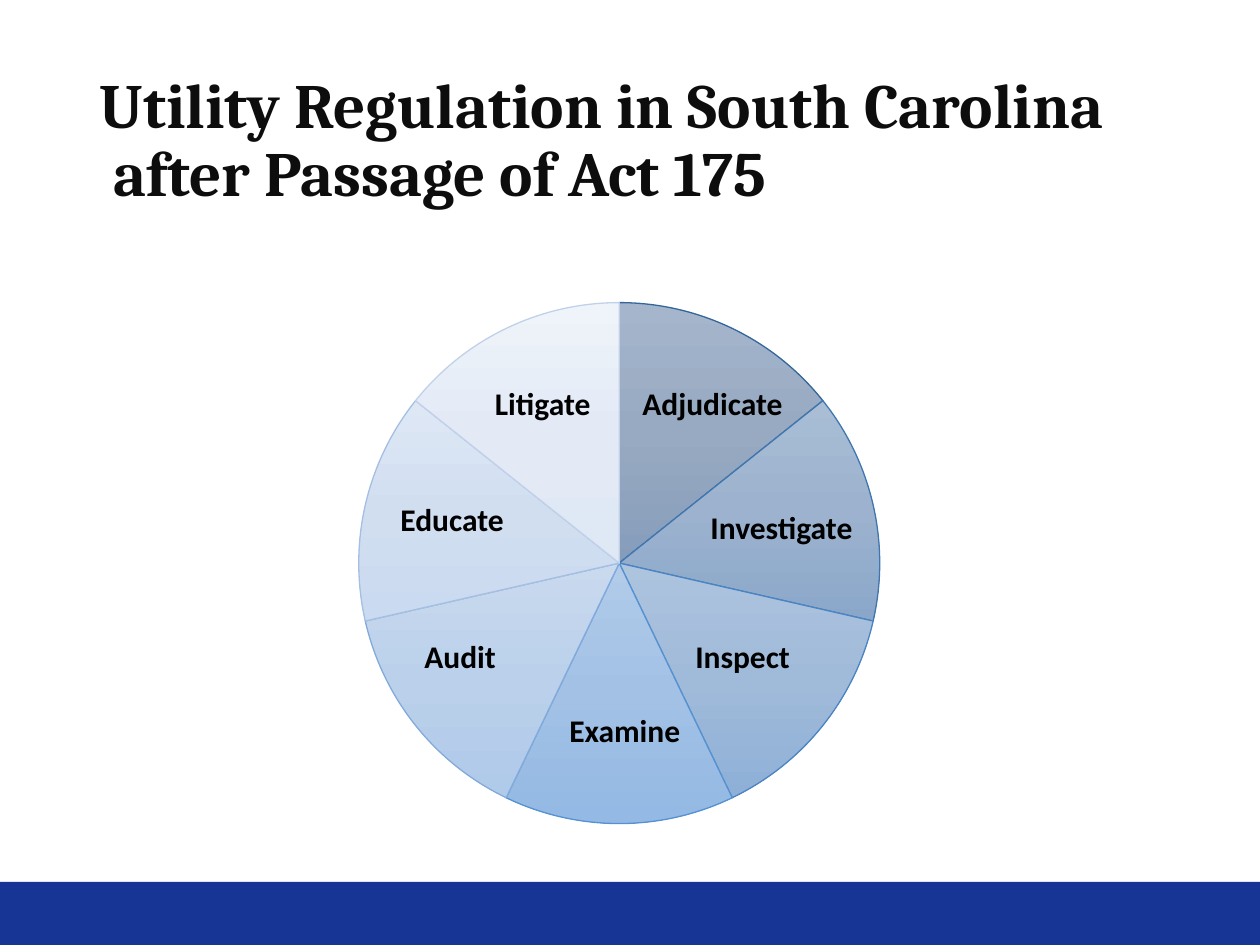
"""Build a slide with a seven-part pie of utility regulation duties."""
import copy

import pptx
import pptx.chart.data
import pptx.dml.color
import pptx.enum.chart
import pptx.enum.shapes
import pptx.enum.text
import pptx.util
from lxml import etree

Inches = pptx.util.Inches
Pt = pptx.util.Pt
RGBColor = pptx.dml.color.RGBColor

BLUE = RGBColor(0x17, 0x35, 0x95)
INK = RGBColor(0x0D, 0x0D, 0x0D)
BLACK = RGBColor(0, 0, 0)

# Top, middle and bottom fill, then outline, of each slice
SLICES = [
    [RGBColor.from_string(tone) for tone in row.split()]
    for row in (
        "A4B5CC 98AAC1 859DBB 33669A",
        "A9BDD5 9CB2CE 8AA7CA 4076AF",
        "ADC4DF A0BAD9 8EB0D7 4A84C2",
        "B1CBE9 A3C1E5 93B9E4 5592D2",
        "C9DAEF BBD0EA B0CAEA 82ABDC",
        "DEE8F5 D1DEF0 CADAF0 A5BFE2",
        "EFF4FA E3EAF6 DFE8F5 C1D1E9",
    )
]
LABELS = [
    ("Adjudicate", 5, 3, 1.33),
    ("Inspect", 5.42, 5.01, 1.17),
    ("Examine", 4.42, 5.59, 1.17),
    ("Audit", 3.27, 5.01, 1.17),
    ("Educate", 3.08, 3.92, 1.17),
    ("Investigate", 5.54, 3.98, 1.36),
    ("Litigate", 3.83, 3, 1.17),
]


def add_band(slide):
    """Draw the blue band along the foot of the slide."""
    band = slide.shapes.add_shape(
        pptx.enum.shapes.MSO_SHAPE.RECTANGLE,
        Inches(0), Inches(7), Inches(10), Inches(0.5))
    band.shadow.inherit = False
    band.fill.solid()
    band.fill.fore_color.rgb = BLUE
    band.line.fill.background()


def add_text(slide, text, box, size, face, color):
    """Add bold wrapped text and return its frame."""
    frame = slide.shapes.add_textbox(*map(Inches, box)).text_frame
    frame.word_wrap = True
    line = frame.paragraphs[0]
    line.text = text
    for run in line.runs:
        run.font.size = Pt(size)
        run.font.name = face
        run.font.bold = True
        run.font.color.rgb = color
    return frame


def add_title(slide):
    """Add the two-line title."""
    frame = add_text(
        slide, "Utility Regulation in South Carolina\v after Passage of Act 175",
        (0.69, 0.4, 8.62, 1.45), 36, "Cambria", INK)
    frame.vertical_anchor = pptx.enum.text.MSO_ANCHOR.MIDDLE
    frame.paragraphs[0].line_spacing = 0.9


def paint_slice(series, index, tones):
    """Give one slice its vertical gradient and outline."""
    form = series.points[index].format
    form.fill.gradient()
    form.fill.gradient_angle = 270
    first, last = form.fill.gradient_stops
    first.color.rgb, last.color.rgb = tones[0], tones[2]
    first.position, last.position = 0, 1
    stops = series._element.xpath(f"c:dPt[c:idx/@val='{index}']//a:gsLst")[0]
    stops.insert(1, copy.deepcopy(stops[0]))
    middle = form.fill.gradient_stops[1]
    middle.color.rgb = tones[1]
    middle.position = 0.5
    form.line.color.rgb = tones[3]
    form.line.width = Pt(0.75)


def place_plot(chart):
    """Fix the place of the pie within its chart frame."""
    plot = chart._chartSpace.chart.plotArea
    space = etree.QName(plot).namespace
    for old in plot.findall(f"{{{space}}}layout"):
        plot.remove(old)
    layout = etree.Element(f"{{{space}}}layout")
    manual = etree.SubElement(layout, f"{{{space}}}manualLayout")
    for name, value in (
        ("layoutTarget", "inner"), ("xMode", "edge"), ("yMode", "edge"),
        ("x", "0.19"), ("y", "0.03"), ("w", "0.62"), ("h", "0.94"),
    ):
        etree.SubElement(manual, f"{{{space}}}{name}", val=value)
    plot.insert(0, layout)


def add_pie(slide):
    """Add the pie of equal slices."""
    data = pptx.chart.data.CategoryChartData()
    data.categories = [str(n + 1) for n in range(len(SLICES))]
    data.add_series("Series 1", [14] * len(SLICES))
    chart = slide.shapes.add_chart(
        pptx.enum.chart.XL_CHART_TYPE.PIE,
        Inches(1.58), Inches(2.25), Inches(6.67), Inches(4.44), data).chart
    chart.has_title = False
    chart.has_legend = False
    chart.font.size = Pt(10)
    chart.font.name = "Calibri"
    chart.font.color.rgb = BLACK
    chart.plots[0].vary_by_categories = True
    for index, tones in enumerate(SLICES):
        paint_slice(chart.plots[0].series[0], index, tones)
    place_plot(chart)


def main():
    """Build and save the slide."""
    deck = pptx.Presentation()
    deck.slide_width, deck.slide_height = Inches(10), Inches(7.5)
    slide = deck.slides.add_slide(deck.slide_layouts[6])
    add_band(slide)
    add_title(slide)
    add_pie(slide)
    for text, left, top, width in LABELS:
        add_text(slide, text, (left, top, width, 0.33), 18, "Calibri", BLACK)
    deck.save("out.pptx")


if __name__ == "__main__":
    main()
